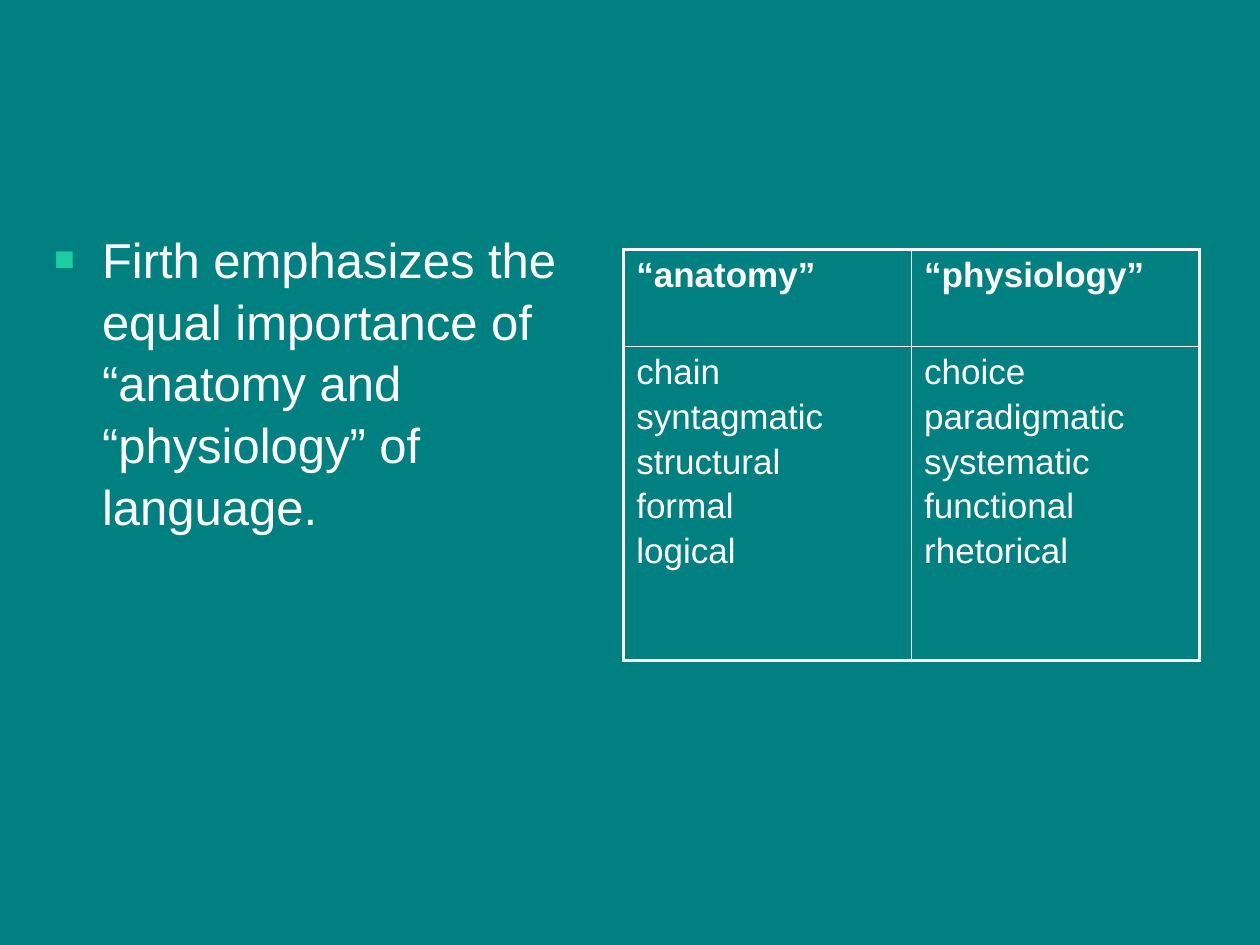
from lxml import etree
from pptx import Presentation
from pptx import util as u
from pptx.dml.color import RGBColor
from pptx.enum import text
from pptx.oxml import ns

COLORS = {"back": "008080", "ink": "FFFFFF", "bullet": "1ACE9F"}
FONT = "Arial"
WIDTH, HEIGHT = u.Inches(10), u.Inches(7.5)
THICK, THIN = u.Pt(2.25), u.Pt(1)

STATEMENT = "Firth emphasizes the equal importance of “anatomy and “physiology” of language."
COLUMNS = {
    "“anatomy”": ["chain", "syntagmatic", "structural", "formal", "logical"],
    "“physiology”": ["choice", "paradigmatic", "systematic", "functional", "rhetorical"],
}


def share(left, top, width, height):
    """Turn shares of the slide's size into a box of lengths."""
    return tuple(int(part * side) for part, side in
                 zip((left, top, width, height), (WIDTH, HEIGHT) * 2))


def add_child(parent, tag, **attributes):
    return etree.SubElement(parent, ns.qn(tag), attributes)


def write(para, words, size, bold=False, before=0, spacing=1.0):
    para.space_before = u.Pt(before)
    para.line_spacing = spacing
    span = para.add_run()
    span.text = words
    span.font.name = FONT
    span.font.size = u.Pt(size)
    span.font.bold = bold
    span.font.color.rgb = RGBColor.from_string(COLORS["ink"])


def set_bullet(para, indent):
    properties = para._p.get_or_add_pPr()
    properties.set("marL", str(indent))
    properties.set("indent", str(-indent))
    color = add_child(properties, "a:buClr")
    add_child(color, "a:srgbClr", val=COLORS["bullet"])
    add_child(properties, "a:buSzPct", val="70000")
    add_child(properties, "a:buFont", typeface=FONT)
    add_child(properties, "a:buChar", char="■")


def set_borders(cell, **widths):
    """Draw cell borders; widths must come in the order lnL, lnR, lnT, lnB."""
    properties = cell._tc.get_or_add_tcPr()
    for position, (side, width) in enumerate(widths.items()):
        line = etree.Element(ns.qn(f"a:{side}"), w=str(width))
        fill = add_child(line, "a:solidFill")
        add_child(fill, "a:srgbClr", val=COLORS["ink"])
        properties.insert(position, line)


def place_statement(body, box):
    body.left, body.top, body.width, body.height = box
    frame = body.text_frame
    frame.auto_size = text.MSO_AUTO_SIZE.NONE
    para = frame.paragraphs[0]
    write(para, STATEMENT, 28, before=5.6, spacing=1.05)
    set_bullet(para, u.Inches(0.38))


def place_comparison(page, box, header_share):
    table = page.shapes.add_table(2, len(COLUMNS), *box).table
    table.first_row = table.horz_banding = False
    table.rows[0].height = int(box[3] * header_share)
    table.rows[1].height = box[3] - table.rows[0].height
    last = len(COLUMNS) - 1
    for column, (heading, terms) in enumerate(COLUMNS.items()):
        for row, lines in enumerate(([heading], terms)):
            cell = table.cell(row, column)
            cell.fill.background()
            for number, words in enumerate(lines):
                frame = cell.text_frame
                para = frame.add_paragraph() if number else frame.paragraphs[0]
                write(para, words, 20, bold=row == 0, before=3.3)
            set_borders(cell,
                        lnL=THICK if column == 0 else THIN,
                        lnR=THICK if column == last else THIN,
                        lnT=THICK if row == 0 else THIN,
                        lnB=THICK if row == 1 else THIN)


def main():
    deck = Presentation()
    deck.slide_width, deck.slide_height = WIDTH, HEIGHT
    page = deck.slides.add_slide(deck.slide_layouts.get_by_name("Title and Content"))
    page.background.fill.solid()
    page.background.fill.fore_color.rgb = RGBColor.from_string(COLORS["back"])
    title = page.shapes.title.element
    title.getparent().remove(title)
    place_statement(page.placeholders[1], share(0.033, 0.233, 0.457, 0.656))
    place_comparison(page, share(0.495, 0.264, 0.457, 0.435), header_share=0.236)
    deck.save("out.pptx")


if __name__ == "__main__":
    main()
